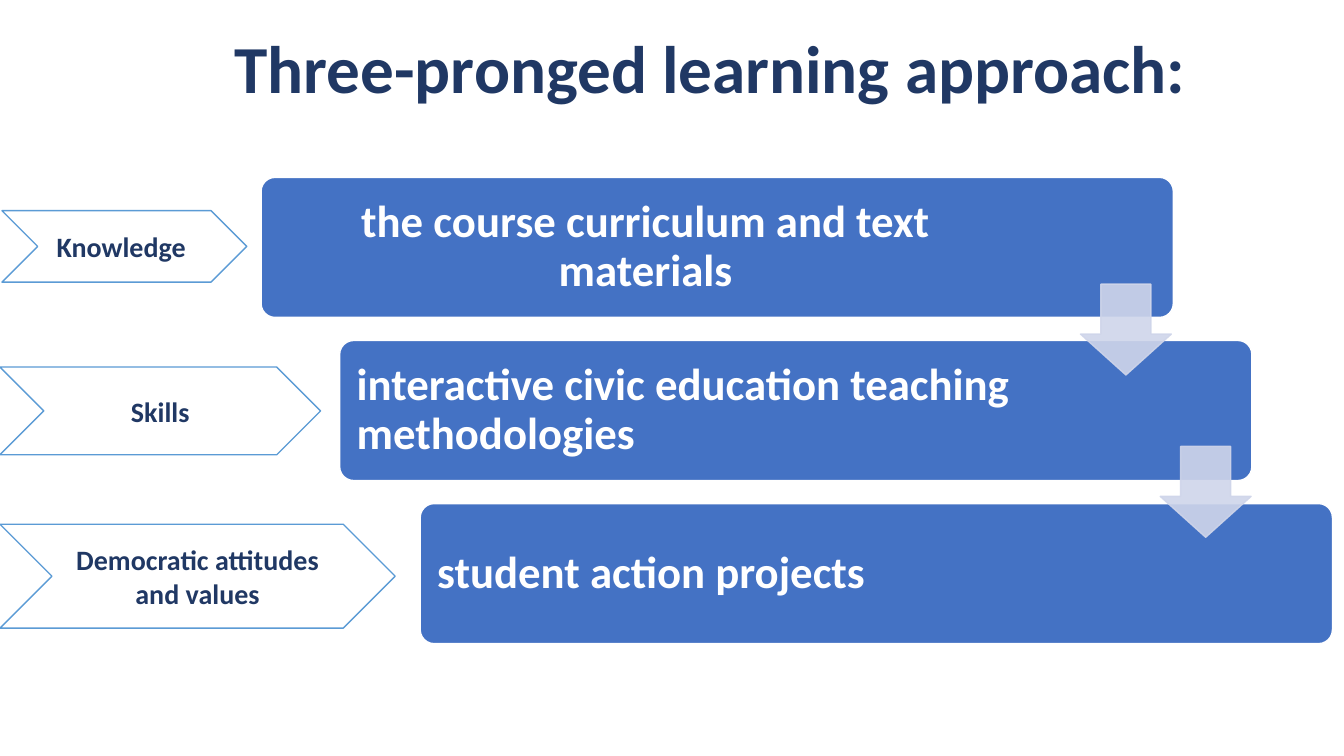
from dataclasses import dataclass

from lxml import etree
from pptx import Presentation
from pptx.dml.color import RGBColor
from pptx.enum import shapes, text
from pptx.oxml import ns
from pptx.util import Cm, Pt


@dataclass(frozen=True)
class Theme:
    font: str = "Calibri"
    navy: str = "203864"
    bar: str = "4472C4"
    arrow: str = "CFD5EA"
    outline: str = "5B9BD5"
    white: str = "FFFFFF"
    title_size: int = 48
    bar_size: int = 32
    label_size: int = 20


THEME = Theme()
KIND = shapes.MSO_SHAPE
ALIGN = text.PP_ALIGN

BAR_TOP, BAR_STEP, BAR_WIDTH, BAR_HEIGHT = 4.47, 4.11, 22.99, 3.53
BAR_PAD = 0.1
ARROW_SIZE = 2.29

# wording, bar left, wording width, alignment
BARS = [
    ("the course curriculum and text materials", 6.58, 19.18, ALIGN.CENTER),
    ("interactive civic education teaching methodologies", 8.56, 18.47, ALIGN.LEFT),
    ("student action projects", 10.59, 18.47, ALIGN.LEFT),
]
# wording, left, top, width, height
PRONGS = [
    ("Knowledge ", 0.05, 5.31, 6.17, 1.8),
    ("Skills", 0, 9.25, 8.08, 2.21),
    ("Democratic attitudes and values", 0, 13.21, 9.96, 2.62),
]
ARROWS = [(27.23, 7.16), (29.24, 11.25)]


def write(frame, wording, *, size, color, align=ALIGN.LEFT, spacing=1.0, inset=None):
    frame.word_wrap = True
    frame.vertical_anchor = text.MSO_ANCHOR.MIDDLE
    if inset is not None:
        frame.margin_left = frame.margin_right = Cm(inset)
        frame.margin_top = frame.margin_bottom = Cm(inset)
    paragraph = frame.paragraphs[0]
    paragraph.alignment = align
    paragraph.line_spacing = spacing
    run = paragraph.add_run()
    run.text = wording
    run.font.name = THEME.font
    run.font.size = Pt(size)
    run.font.bold = True
    run.font.color.rgb = RGBColor.from_string(color)


def add_block(slide, kind, box, fill, line, adjustments=()):
    block = slide.shapes.add_shape(kind, *map(Cm, box))
    block.shadow.inherit = False
    block.fill.solid()
    block.fill.fore_color.rgb = RGBColor.from_string(fill)
    block.line.color.rgb = RGBColor.from_string(line)
    block.line.width = Pt(1)
    for index, value in enumerate(adjustments):
        block.adjustments[index] = value
    return block


def add_wording(slide, box, wording, **style):
    frame = slide.shapes.add_textbox(*map(Cm, box)).text_frame
    write(frame, wording, **style)


def set_opacity(block, percent):
    """Apply one opacity to both the fill and the outline."""
    for color in block._element.spPr.iter(ns.qn("a:srgbClr")):
        alpha = etree.SubElement(color, ns.qn("a:alpha"))
        alpha.set("val", str(percent * 1000))


def add_bar(slide, row, wording, left, wording_width, align):
    top = BAR_TOP + row * BAR_STEP
    add_block(slide, KIND.ROUNDED_RECTANGLE, (left, top, BAR_WIDTH, BAR_HEIGHT),
              THEME.bar, THEME.white, [0.1])
    wording_box = (left + BAR_PAD, top + BAR_PAD,
                   wording_width, BAR_HEIGHT - 2 * BAR_PAD)
    add_wording(slide, wording_box, wording, size=THEME.bar_size,
                color=THEME.white, align=align, spacing=0.9, inset=0.33)


def add_arrow(slide, left, top):
    arrow = add_block(slide, KIND.DOWN_ARROW, (left, top, ARROW_SIZE, ARROW_SIZE),
                      THEME.arrow, THEME.arrow, [0.55, 0.45])
    set_opacity(arrow, 90)


def add_prong(slide, wording, *box):
    prong = add_block(slide, KIND.CHEVRON, box, THEME.white, THEME.outline)
    write(prong.text_frame, wording, size=THEME.label_size,
          color=THEME.navy, align=ALIGN.CENTER)


def main():
    deck = Presentation()
    deck.slide_width, deck.slide_height = Cm(33.87), Cm(19.05)
    slide = deck.slides.add_slide(deck.slide_layouts[6])

    for row, bar in enumerate(BARS):
        add_bar(slide, row, *bar)
    for position in ARROWS:
        add_arrow(slide, *position)
    add_wording(slide, (5.66, 0.46, 27.36, 2.69), "Three-pronged learning approach:",
                size=THEME.title_size, color=THEME.navy, spacing=0.9)
    for prong in PRONGS:
        add_prong(slide, *prong)

    deck.save("out.pptx")


if __name__ == "__main__":
    main()
